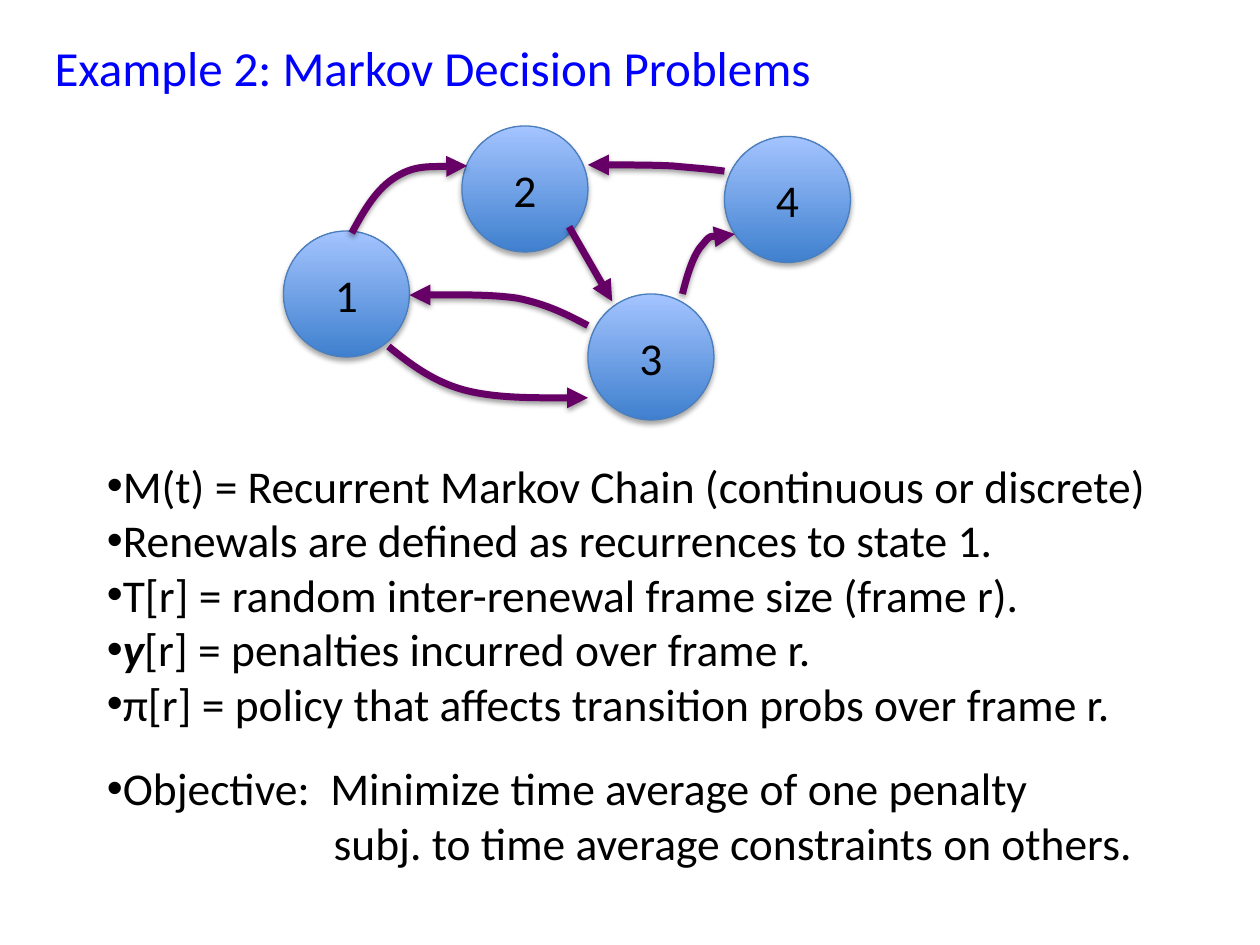
from pptx import Presentation
from pptx.dml.color import RGBColor
from pptx.enum.shapes import MSO_CONNECTOR, MSO_SHAPE
from pptx.enum.text import MSO_ANCHOR, MSO_AUTO_SIZE, PP_ALIGN
from pptx.oxml import parse_xml
from pptx.oxml.ns import nsdecls, qn
from pptx.oxml.xmlchemy import OxmlElement as new_element
from pptx.util import Inches, Pt

BLUE = RGBColor(0x00, 0x00, 0xFF)
BLACK = RGBColor(0x00, 0x00, 0x00)
PURPLE = RGBColor(0x66, 0x00, 0x66)
STATE_DARK = RGBColor(0x3F, 0x80, 0xCE)
STATE_LIGHT = RGBColor(0xA4, 0xC4, 0xFF)
STATE_EDGE = RGBColor(0x4B, 0x7E, 0xBC)
FONT = "Calibri"

deck = Presentation()
deck.slide_width, deck.slide_height = Inches(10), Inches(7.5)
page = deck.slides.add_slide(deck.slide_layouts[5])
cell = deck.slide_width // 120


def style_font(para, size, color):
    for span in para.runs:
        span.font.name = FONT
        span.font.size = Pt(size)
        span.font.color.rgb = color


def add_shadow(shape, distance, opacity):
    shape._element.spPr.append(parse_xml(
        f'<a:effectLst {nsdecls("a")}>'
        f'<a:outerShdw blurRad="{Pt(3.1)}" dist="{Pt(distance)}" dir="5400000" rotWithShape="0">'
        f'<a:srgbClr val="000000"><a:alpha val="{opacity * 1000}"/></a:srgbClr>'
        '</a:outerShdw></a:effectLst>'))


title = page.shapes.title
title.left, title.top, title.width, title.height = 4 * cell, 3 * cell, 109 * cell, 7 * cell
title.text_frame.text = "Example 2: Markov Decision Problems"
title.text_frame.auto_size = MSO_AUTO_SIZE.NONE
title.text_frame.vertical_anchor = MSO_ANCHOR.TOP
title.text_frame.paragraphs[0].alignment = PP_ALIGN.LEFT
style_font(title.text_frame.paragraphs[0], 28, BLUE)

notes = [
    "M(t) = Recurrent Markov Chain (continuous or discrete)",
    "Renewals are defined as recurrences to state 1.",
    "T[r] = random inter-renewal frame size (frame r).",
    "y[r] = penalties incurred over frame r.",
    "π[r] = policy that affects transition probs over frame r.",
    "Objective:  Minimize time average of one penalty",
    "subj. to time average constraints on others.",
]
box = page.shapes.add_textbox(9 * cell, 43 * cell, 102 * cell, 41 * cell)
box.text_frame.word_wrap = True
box.text_frame.text = "\n".join(notes)
for para in box.text_frame.paragraphs:
    properties = para._p.get_or_add_pPr()
    if para.text.startswith("subj."):
        properties.set("marL", str(Inches(1.8)))
    else:
        if para.text.startswith("Objective"):
            para.space_before = Pt(17)
        elif para.text.startswith("y"):
            rest = para.text[1:]
            para.runs[0].text = "y"
            para.runs[0].font.bold = para.runs[0].font.italic = True
            para.add_run().text = rest
        bullet_font = new_element("a:buFont")
        bullet_font.set("typeface", "Arial")
        bullet = new_element("a:buChar")
        bullet.set("char", "•")
        properties.extend([bullet_font, bullet])
    style_font(para, 26, BLACK)

states = {"1": (27, 22), "2": (44, 12), "3": (56, 28), "4": (69, 13)}
for name, (column, row) in states.items():
    state = page.shapes.add_shape(MSO_SHAPE.OVAL, column * cell, row * cell, 12 * cell, 12 * cell)
    state.fill.gradient()
    state.fill.gradient_angle = 90
    for stop, color in zip(state.fill.gradient_stops, (STATE_DARK, STATE_LIGHT)):
        stop.color.rgb = color
    state.line.color.rgb = STATE_EDGE
    state.line.width = Pt(0.75)
    add_shadow(state, 1.8, 35)
    state.text_frame.text = name
    state.text_frame.vertical_anchor = MSO_ANCHOR.MIDDLE
    state.text_frame.paragraphs[0].alignment = PP_ALIGN.CENTER
    style_font(state.text_frame.paragraphs[0], 26, BLACK)

transitions = [
    [(33.5, 22.2), (34.7, 20), (35.9, 17.9), (37.8, 16.8), (39.6, 15.7), (44.5, 15.8)],
    [(37, 33), (39.1, 34.7), (41.3, 36.4), (44.4, 37.2), (47.6, 38), (56, 37.9)],
    [(56, 31), (54.1, 30), (52.2, 29), (49.3, 28.4), (46.6, 28), (39, 28.1)],
    [(65, 28), (65.5, 26), (66.1, 24.1), (67, 23.2), (67.8, 22.2), (70, 22.3)],
    [(69, 16.3), (67.6, 16.1), (66.1, 16), (64, 15.8), (61.8, 15.7), (56, 15.7)],
    [(54.2, 21.6), (58.3, 28.7)],
]
for transition in transitions:
    points = [(round(x * cell), round(y * cell)) for x, y in transition]
    if len(points) == 2:
        arrow = page.shapes.add_connector(MSO_CONNECTOR.STRAIGHT, *points[0], *points[1])
    else:
        builder = page.shapes.build_freeform(*points[0])
        builder.add_line_segments(points[1:] + points[-1:], close=False)
        arrow = builder.convert_to_shape()
        arrow.fill.background()
        segments = list(arrow._element.iter(qn("a:lnTo")))
        for first in range(0, len(segments), 3):
            curve = new_element("a:cubicBezTo")
            segments[first].addprevious(curve)
            for segment in segments[first:first + 3]:
                curve.append(segment[0])
                segment.getparent().remove(segment)
    arrow.line.color.rgb = PURPLE
    arrow.line.width = Pt(4)
    head = new_element("a:tailEnd")
    head.set("type", "triangle")
    arrow.line._get_or_add_ln().append(head)
    add_shadow(arrow, 1.6, 38)

deck.save("out.pptx")
